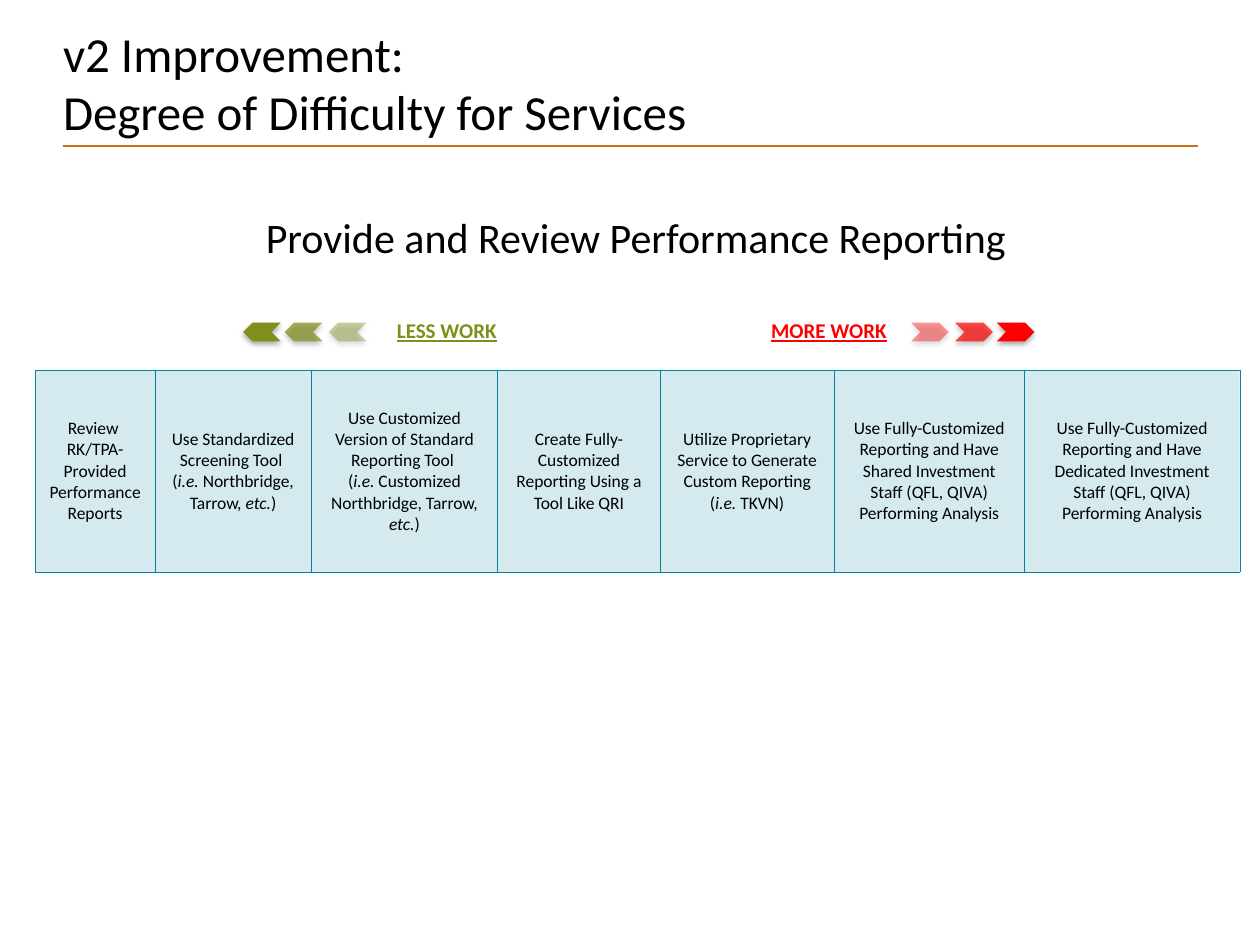
"""Build a slide that ranks performance reporting services by degree of difficulty."""
from copy import deepcopy

from lxml import etree
from pptx import Presentation
from pptx.dml.color import RGBColor
from pptx.enum.shapes import MSO_CONNECTOR, MSO_SHAPE
from pptx.enum.text import MSO_ANCHOR, PP_ALIGN
from pptx.oxml.ns import qn
from pptx.util import Inches, Pt

LEFT, CENTER = PP_ALIGN.LEFT, PP_ALIGN.CENTER
MIDDLE = MSO_ANCHOR.MIDDLE
CHEVRON, STRAIGHT = MSO_SHAPE.CHEVRON, MSO_CONNECTOR.STRAIGHT
BLACK, GREEN, RED, TEAL, ORANGE = "000000", "828E1B", "FF0000", "0084A1", "CE7019"


def paint(fill, color, opacity=100):
    """Give a shape, cell, line or font fill one solid colour."""
    fill.solid()
    fill.fore_color.rgb = RGBColor.from_string(color)
    if opacity < 100:
        tone = fill._xPr.find(qn("a:solidFill"))[0]
        etree.SubElement(tone, qn("a:alpha"), val=str(opacity * 1000))


def write(frame, text, size, color=BLACK, align=LEFT, **style):
    """Write one paragraph, with italics between asterisks."""
    para = frame.paragraphs[0]
    para.alignment = align
    for part, words in enumerate(text.split("*")):
        for number, line in enumerate(words.split("\n")):
            if number:
                para.add_line_break()
            span = para.add_run()
            span.text = line
            formats = {"name": "Calibri", "size": Pt(size), "italic": part % 2 == 1, **style}
            for name, value in formats.items():
                setattr(span.font, name, value)
            paint(span.font.fill, color)
            if number:
                span._r.getprevious().append(deepcopy(span._r.rPr))


deck = Presentation()
deck.slide_width, deck.slide_height = Inches(10), Inches(7.5)
COLUMN, ROW = deck.slide_width / 100, deck.slide_height / 75
page = deck.slides.add_slide(deck.slide_layouts[5])

title = page.shapes.title
placement = {"left": 4, "top": 1.5, "width": 82.4, "height": 10}
for side, cells in placement.items():
    setattr(title, side, int(cells * COLUMN))
title.text_frame.vertical_anchor = MIDDLE
write(title.text_frame, "v2 Improvement:\nDegree of Difficulty for Services", 28)

rule = page.shapes.add_connector(
    STRAIGHT, int(5 * COLUMN), int(11.6 * ROW), int(95.1 * COLUMN), int(11.6 * ROW))
paint(rule.line.fill, ORANGE)
rule.line.width = Pt(0.75)
etree.SubElement(rule._element.spPr, qn("a:effectLst"))

emphasis = {"bold": True, "underline": True}
labels = [
    ("Provide and Review Performance Reporting", 21.1, 16.8, 59.3, 4, 24, BLACK, {}),
    ("LESS WORK", 31.5, 25.2, 8.1, 2, 12, GREEN, emphasis),
    ("MORE WORK", 61.2, 25.2, 9.4, 2, 12, RED, emphasis),
]
for text, left, top, width, height, size, color, style in labels:
    box = page.shapes.add_textbox(
        int(left * COLUMN), int(top * ROW), int(width * COLUMN), int(height * ROW))
    for side in ("left", "top", "right", "bottom"):
        setattr(box.text_frame, f"margin_{side}", 0)
    box.text_frame.word_wrap = False
    write(box.text_frame, text, size, color, **style)

opacities = (100, 70, 40)
arrow_groups = [(GREEN, True, (19.3, 22.6, 26.1)), (RED, False, (79.1, 75.8, 72.3))]
for color, flipped, lefts in arrow_groups:
    for left, opacity in zip(lefts, opacities):
        arrow = page.shapes.add_shape(
            CHEVRON, int(left * COLUMN), int(25.6 * ROW), int(3 * COLUMN), int(1.5 * ROW))
        paint(arrow.fill, color, opacity)
        arrow.line.fill.background()
        arrow.shadow.inherit = False
        if flipped:
            arrow._element.spPr.find(qn("a:xfrm")).set("flipH", "1")
        effects = arrow._element.spPr.find(qn("a:effectLst"))
        shadow = etree.SubElement(
            effects, qn("a:outerShdw"), blurRad=str(Pt(3.1)), dist=str(Pt(1.8)),
            dir="5400000", rotWithShape="0")
        tone = etree.SubElement(shadow, qn("a:srgbClr"), val=BLACK)
        etree.SubElement(tone, qn("a:alpha"), val="35000")

services = [
    (9.5, "Review \nRK/TPA-Provided Performance Reports"),
    (12.4, "Use Standardized Screening Tool \n(*i.e.* Northbridge, Tarrow,* etc.*)"),
    (14.8, "Use Customized Version of Standard Reporting Tool \n"
           "(*i.e.* Customized Northbridge, Tarrow, *etc.*)"),
    (12.9, "Create Fully-Customized Reporting Using a Tool Like QRI"),
    (13.8, "Utilize Proprietary Service to Generate Custom Reporting (*i.e.* TKVN)"),
    (15.1, "Use Fully-Customized Reporting and Have Shared Investment Staff "
           "(QFL, QIVA) Performing Analysis"),
    (17.1, "Use Fully-Customized Reporting and Have Dedicated Investment Staff "
           "(QFL, QIVA) Performing Analysis"),
]
table = page.shapes.add_table(
    1, len(services), int(2.8 * COLUMN), int(29.4 * ROW),
    int(95.6 * COLUMN), int(16 * ROW)).table
table.first_row = table.horz_banding = False
for index, (width, text) in enumerate(services):
    table.columns[index].width = int(width * COLUMN)
    cell = table.cell(0, index)
    cell.vertical_anchor = MIDDLE
    cell.margin_top = cell.margin_bottom = 0
    cell.margin_left = cell.margin_right = int(COLUMN)
    write(cell.text_frame, text, 10, align=CENTER)
    paint(cell.fill, TEAL, 17)
    for order, edge in enumerate(("lnL", "lnR", "lnT", "lnB")):
        border = etree.Element(qn(f"a:{edge}"), w=str(Pt(0.25)))
        solid = etree.SubElement(border, qn("a:solidFill"))
        etree.SubElement(solid, qn("a:srgbClr"), val=TEAL)
        cell._tc.tcPr.insert(order, border)

deck.save("out.pptx")
